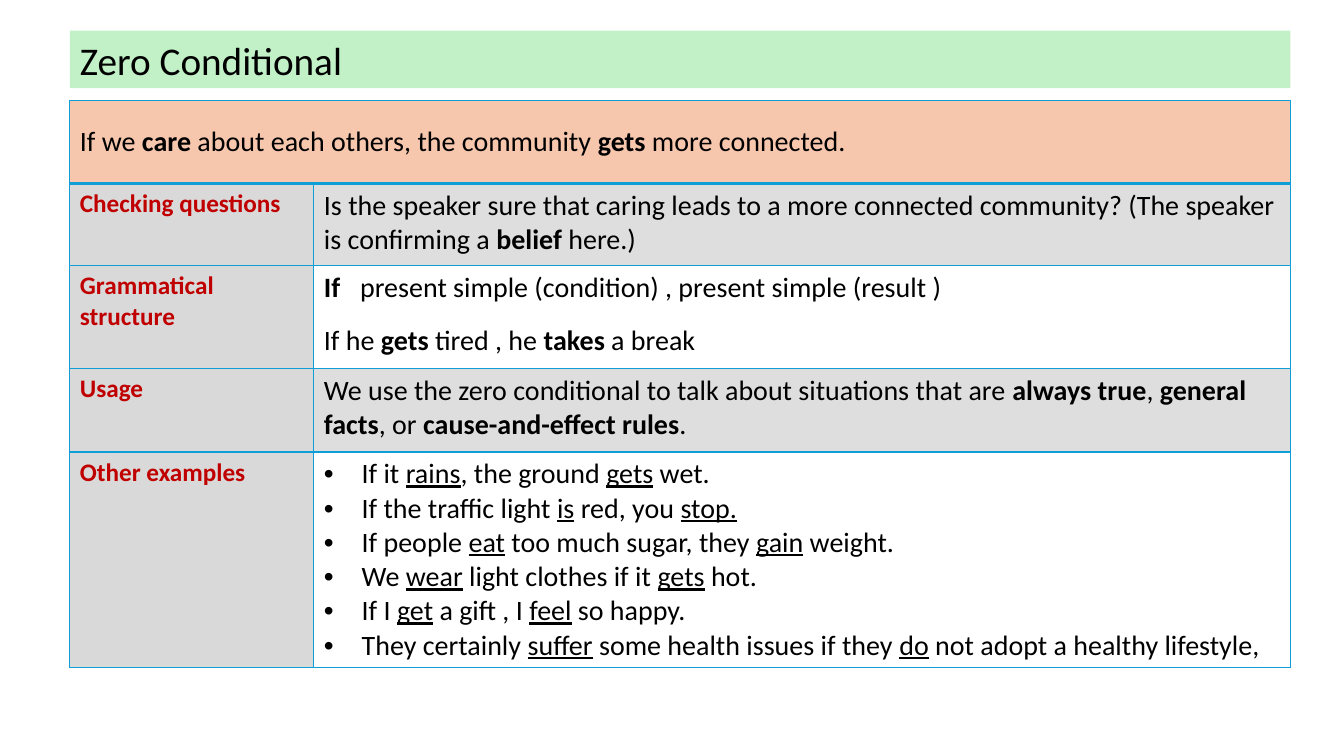
from lxml.etree import SubElement as Sub
from pptx import Presentation
from pptx.dml.color import RGBColor as Rgb
from pptx.enum.text import MSO_ANCHOR as Anchor, MSO_AUTO_SIZE as Auto, PP_ALIGN as Align
from pptx.oxml.ns import qn
from pptx.util import Cm, Pt

BLUE, GREEN, PEACH, GREY, PALE = "0F9ED5", "C2F1C8", "F6C6AD", "D9D9D9", "DEDEDE"
HEAD = {"size": Pt(28), "name": "Calibri", "bold": False}
LABEL = {"size": Pt(18), "name": "Calibri", "bold": True}
PLAIN = {"size": Pt(20), "name": "Calibri", "bold": False}

SAMPLE = "If we |care| about each others, the community |gets| more connected."
ROWS = [
    ("Checking questions", 2.08, PALE, "bold", [
        "Is the speaker sure that caring leads to a more connected community? "
        "(The speaker is confirming a |belief |here.)"]),
    ("Grammatical structure", 2.59, None, "bold", [
        "|If|\tpresent simple (condition) , present simple (result )",
        "If he |gets| tired , he |takes| a break"]),
    ("Usage", 2.1, PALE, "bold", [
        "We use the zero conditional to talk about situations that are "
        "|always true|, |general facts|, or |cause-and-effect rules|."]),
    ("Other examples", 5.44, None, "underline", [
        "If it |rains|, the ground |gets| wet.",
        "If the traffic light |is| red, you |stop.|",
        "If people |eat| too much sugar, they |gain| weight.",
        "We |wear| light clothes if it |gets| hot.",
        "If I |get| a gift , I |feel| so happy.",
        "They certainly |suffer| some health issues if they |do| not adopt a healthy lifestyle,"]),
]


def paint(part, color):
    if color:
        part.solid()
        part.fore_color.rgb = Rgb.from_string(color)
    else:
        part.background()


def write(frame, lines, look, mark="bold", color="000000"):
    for i, line in enumerate(lines):
        para = frame.add_paragraph() if i else frame.paragraphs[0]
        for j, text in enumerate(line.split("|")):
            if not text:
                continue
            run = para.add_run()
            run.text = text
            for key, value in {**look, **({mark: True} if j % 2 else {})}.items():
                setattr(run.font, key, value)
            paint(run.font.fill, color)


def edge(cell, top=1, foot=1):
    props = cell._tc.get_or_add_tcPr()
    for side, width in (("L", 1), ("R", 1), ("T", top), ("B", foot)):
        line = Sub(props, qn("a:ln" + side), w=str(Pt(width)))
        Sub(Sub(line, qn("a:solidFill")), qn("a:srgbClr"), val=BLUE)


def bullet(para):
    props = para._p.get_or_add_pPr()
    props.set("marL", str(Cm(0.95)))
    props.set("indent", str(-Cm(0.95)))
    Sub(props, qn("a:buFont"), typeface="Arial")
    Sub(props, qn("a:buChar"), char="•")


def tab(para, pos):
    stops = Sub(para._p.get_or_add_pPr(), qn("a:tabLst"))
    Sub(stops, qn("a:tab"), pos=str(pos), algn="l")


def banner(slide, left, top, width, height):
    title = slide.shapes.title
    box = {"left": left, "top": top, "width": width, "height": height}
    for key, value in box.items():
        setattr(title, key, value)
    paint(title.fill, GREEN)
    frame = title.text_frame
    frame.auto_size = Auto.NONE
    frame.vertical_anchor = Anchor.MIDDLE
    write(frame, ["Zero Conditional"], HEAD)
    frame.paragraphs[0].alignment = Align.LEFT


def chart(slide, left, top, width, height):
    grid = slide.shapes.add_table(len(ROWS) + 1, 2, left, top, width, height).table
    grid.first_row = grid.horz_banding = False
    grid.columns[0].width = Cm(6.15)
    grid.columns[1].width = width - Cm(6.15)
    grid.rows[0].height = Cm(2.08)
    for cell in grid.rows[0].cells:
        edge(cell, foot=2)
    lead = grid.cell(0, 0)
    lead.merge(grid.cell(0, 1))
    lead.vertical_anchor = Anchor.MIDDLE
    paint(lead.fill, PEACH)
    write(lead.text_frame, [SAMPLE], PLAIN)
    for i, (name, tall, shade, mark, lines) in enumerate(ROWS, 1):
        grid.rows[i].height = Cm(tall)
        label, body = grid.rows[i].cells
        for cell, color in ((label, GREY), (body, shade)):
            edge(cell, top=2 if i == 1 else 1)
            paint(cell.fill, color)
        write(label.text_frame, [name], LABEL, color="C00000")
        write(body.text_frame, lines, PLAIN, mark)
    rule = grid.cell(2, 1).text_frame.paragraphs
    tab(rule[0], Cm(0.91))
    rule[1].space_before = Pt(13.4)
    for para in grid.cell(4, 1).text_frame.paragraphs:
        bullet(para)


def main():
    deck = Presentation()
    deck.slide_width, deck.slide_height = Cm(33.87), Cm(19.05)
    slide = deck.slides.add_slide(deck.slide_layouts[5])
    left, width = Cm(1.76), Cm(30.76)
    banner(slide, left, Cm(0.77), width, Cm(1.45))
    chart(slide, left, Cm(2.54), width, Cm(14.29))
    deck.save("out.pptx")


if __name__ == "__main__":
    main()
